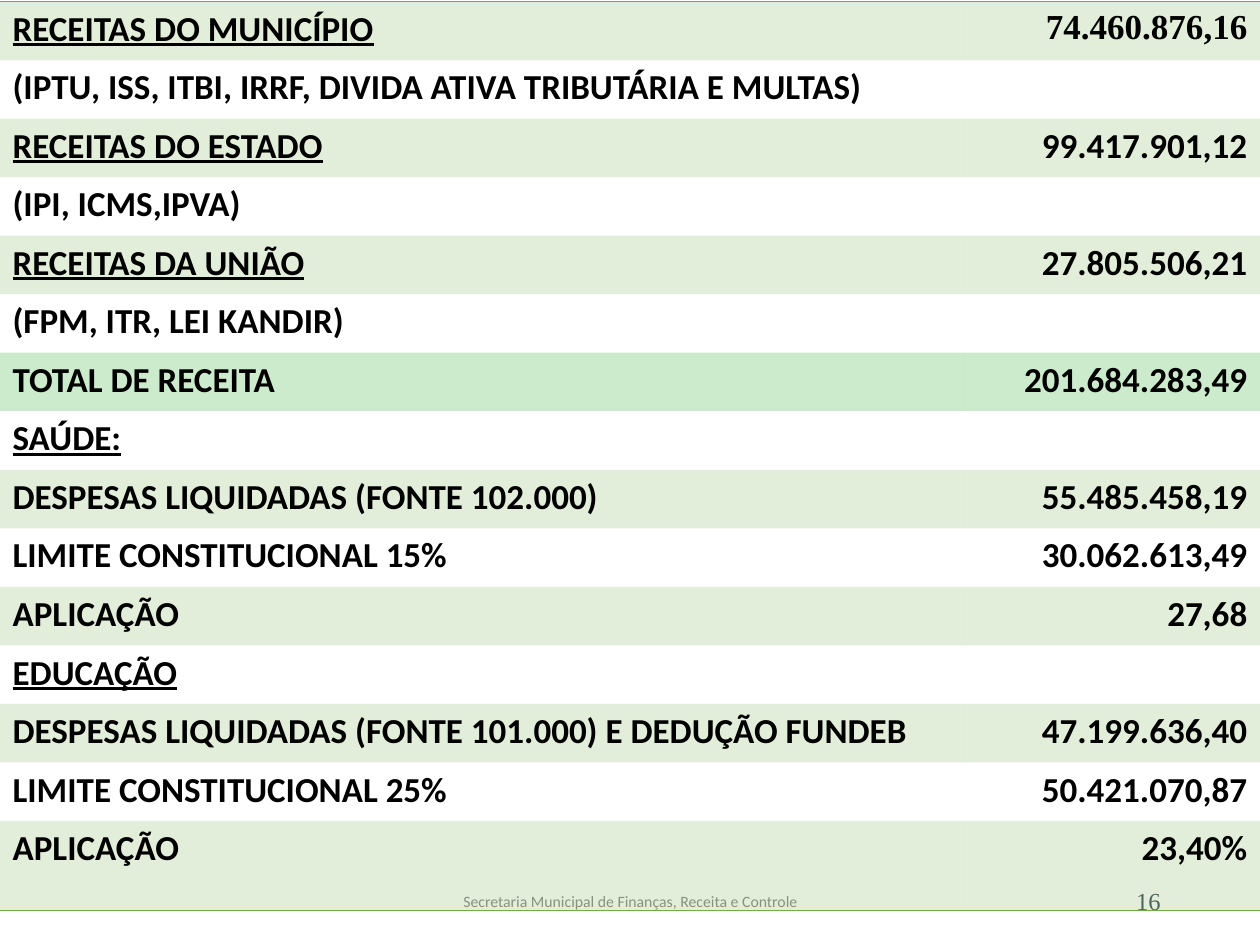
from lxml.etree import SubElement
from pptx import Presentation
from pptx.dml.color import RGBColor
from pptx.enum.text import MSO_ANCHOR, PP_ALIGN
from pptx.oxml import parse_xml
from pptx.oxml.ns import nsdecls, qn
from pptx.util import Cm, Pt


def paint(fill, tone):
    fill.solid()
    fill.fore_color.rgb = RGBColor.from_string(tone)


def write(frame, text, size=20, face="Calibri", tone="000000", bold=False,
          under=False, align=PP_ALIGN.LEFT):
    par = frame.paragraphs[0]
    par.alignment = align
    run = par.add_run()
    run.text = text
    font = run.font
    font.size = Pt(size)
    font.name = face
    font.bold = bold
    font.underline = under
    paint(font.fill, tone)


deck = Presentation()
deck.slide_width = Cm(25.4)
deck.slide_height = Cm(19.05)
slide = deck.slides.add_slide(deck.slide_layouts[6])

notes = [
    ("16", 17.93, 5.72, dict(size=14, face="Times New Roman", tone="44546A",
                             align=PP_ALIGN.RIGHT)),
    ("Secretaria Municipal de Finanças, Receita e Controle", 8.41, 8.59,
     dict(size=9, tone="8C8C8C", align=PP_ALIGN.CENTER)),
]
for text, left, width, look in notes:
    box = slide.shapes.add_textbox(Cm(left), Cm(17.65), Cm(width), Cm(1.02))
    frame = box.text_frame
    frame.word_wrap = True
    frame.vertical_anchor = MSO_ANCHOR.MIDDLE
    write(frame, text, **look)

rows = [
    ("RECEITAS DO MUNICÍPIO", "74.460.876,16"),
    ("(IPTU, ISS, ITBI, IRRF, DIVIDA ATIVA TRIBUTÁRIA E MULTAS)", ""),
    ("RECEITAS DO ESTADO", "99.417.901,12"),
    ("(IPI, ICMS,IPVA)", ""),
    ("RECEITAS DA UNIÃO", "27.805.506,21"),
    ("(FPM, ITR, LEI KANDIR)", ""),
    ("TOTAL DE RECEITA", "201.684.283,49"),
    ("SAÚDE:", ""),
    ("DESPESAS LIQUIDADAS (FONTE 102.000)", "55.485.458,19"),
    ("LIMITE CONSTITUCIONAL 15%", "30.062.613,49"),
    ("APLICAÇÃO", "27,68"),
    ("EDUCAÇÃO", ""),
    ("DESPESAS LIQUIDADAS (FONTE 101.000) E DEDUÇÃO FUNDEB", "47.199.636,40"),
    ("LIMITE CONSTITUCIONAL 25%", "50.421.070,87"),
    ("APLICAÇÃO", "23,40%"),
]
heads = {0, 2, 4, 7, 11}
total = 6
last = len(rows) - 1
green = "70AD47"
edges = {0: "lnT", last: "lnB"}

table = slide.shapes.add_table(len(rows), 2, 0, Cm(0.03), Cm(25.4), Cm(18.32)).table
table.first_row = False
table.horz_banding = False
plain = "{2D5ABB26-0587-4C30-8999-92F81FD0307C}"
table._tbl.tblPr.find(qn("a:tableStyleId")).text = plain
table.columns[0].width = Cm(19.43)
table.columns[1].width = Cm(5.97)

for r, pair in enumerate(rows):
    table.rows[r].height = Cm(1.8 if r == last else 1.18)
    for c, text in enumerate(pair):
        cell = table.cell(r, c)
        if text:
            write(cell.text_frame, text, bold=True,
                  face="Times New Roman" if (r, c) == (0, 1) else "Calibri",
                  under=c == 0 and r in heads,
                  align=PP_ALIGN.RIGHT if c else PP_ALIGN.LEFT)
        if r % 2 and r != total:
            cell.fill.background()
        else:
            paint(cell.fill, "009900" if r == total else green)
            shade = cell._tc.tcPr.find(".//" + qn("a:srgbClr"))
            SubElement(shade, qn("a:alpha")).set("val", "20000")
        if r in edges:
            cell._tc.tcPr.insert(0, parse_xml(
                f'<a:{edges[r]} {nsdecls("a")} w="12700"><a:solidFill>'
                f'<a:srgbClr val="{green}"/></a:solidFill></a:{edges[r]}>'))

deck.save("out.pptx")
